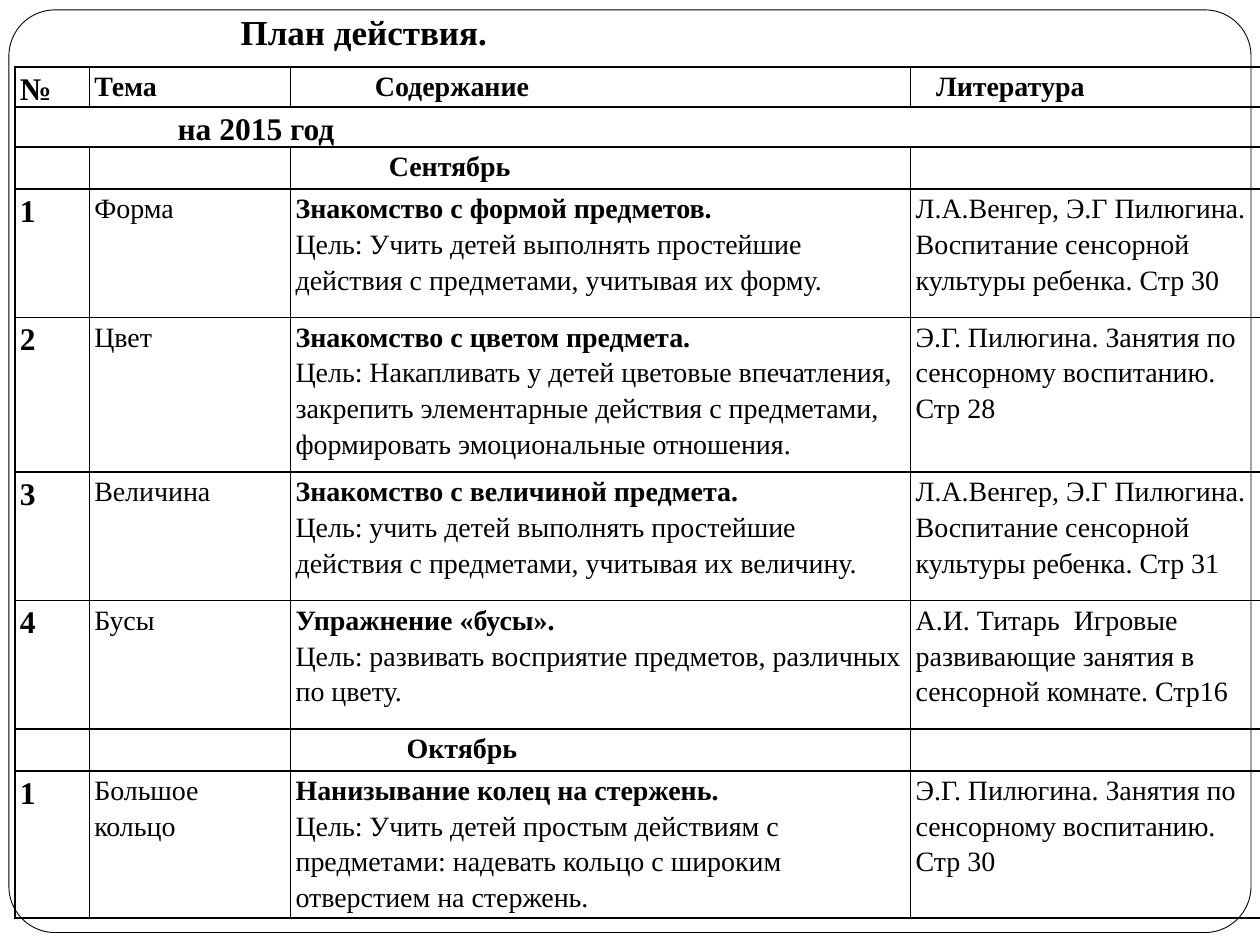
from lxml.etree import SubElement
from pptx import Presentation
from pptx.dml.color import RGBColor
from pptx.enum.shapes import MSO_SHAPE
from pptx.enum.text import MSO_ANCHOR
from pptx.oxml.ns import qn
from pptx.util import Cm, Pt

COLUMNS = [1.5, 4.06, 12.5, 7.06]
ROWS = [0.79, 0.79, 0.84, 2.59, 3.12, 2.59, 2.59, 0.84, 2.97]
VENGER = "Л.А.Венгер, Э.Г Пилюгина. Воспитание сенсорной культуры ребенка. Стр "
PILYUGINA = "Э.Г. Пилюгина. Занятия по сенсорному воспитанию. Стр "
HEADINGS = [("№", 18, 0), ("Тема", 16, 0), ("Содержание", 16, 1.6), ("Литература", 16, 0.41)]
MONTHS = {2: ("Сентябрь", 1.88), 7: ("Октябрь", 2.24)}
LESSONS = {
    3: ("1", "Форма", "Знакомство с формой предметов.",
        "Цель: Учить детей выполнять простейшие действия с предметами, учитывая их форму.",
        VENGER + "30"),
    4: ("2", "Цвет", "Знакомство с цветом предмета.",
        "Цель: Накапливать у детей цветовые впечатления, закрепить элементарные действия "
        "с предметами, формировать эмоциональные отношения.",
        PILYUGINA + "28"),
    5: ("3", "Величина", "Знакомство с величиной предмета.",
        "Цель: учить детей выполнять простейшие действия с предметами, учитывая их величину.",
        VENGER + "31"),
    6: ("4", "Бусы", "Упражнение «бусы».",
        "Цель: развивать восприятие предметов, различных по цвету.",
        "А.И. Титарь  Игровые развивающие занятия в сенсорной комнате. Стр16"),
    8: ("1", "Большое кольцо", "Нанизывание колец на стержень.",
        "Цель: Учить детей простым действиям с предметами: надевать кольцо с широким "
        "отверстием на стержень.",
        PILYUGINA + "30"),
}


def color(value):
    return RGBColor.from_string(value)


def write(frame, text, size=16, bold=False, indent=0, spacing=1.15):
    paragraph = frame.paragraphs[0]
    if paragraph.runs:
        paragraph = frame.add_paragraph()
    paragraph.line_spacing = spacing
    if indent:
        properties = paragraph._p.get_or_add_pPr()
        properties.set("marL", str(Cm(indent)))
        properties.set("indent", "0")
    run = paragraph.add_run()
    run.text = text
    run.font.name = SlideBuilder.font
    run.font.size = Pt(size)
    run.font.bold = bold
    run.font.color.rgb = color(SlideBuilder.ink)


class SlideBuilder:
    """Holds the style and the current slide, and adds its elements."""

    font = "Times New Roman"
    ink = "000000"
    paper = "FFFFFF"

    def __init__(self, slide):
        self.slide = slide

    def frame(self, left, top, width, height):
        border = self.slide.shapes.add_shape(
            MSO_SHAPE.ROUNDED_RECTANGLE, Cm(left), Cm(top), Cm(width), Cm(height))
        border.adjustments[0] = 0.05
        border.shadow.inherit = False
        border.fill.solid()
        border.fill.fore_color.rgb = color(self.paper)
        border.line.color.rgb = color(self.ink)
        border.line.width = Pt(0.5)

    def title(self, text, left, top, width, height, **style):
        heading = self.slide.shapes.add_textbox(
            Cm(left), Cm(top), Cm(width), Cm(height)).text_frame
        heading.word_wrap = True
        heading.vertical_anchor = MSO_ANCHOR.MIDDLE
        write(heading, text, **style)

    def table(self, left, top, columns, rows):
        plan = self.slide.shapes.add_table(
            len(rows), len(columns), Cm(left), Cm(top), Cm(sum(columns)), Cm(sum(rows))).table
        plan.first_row = plan.horz_banding = False
        for column, width in zip(plan.columns, columns):
            column.width = Cm(width)
        for row, height in zip(plan.rows, rows):
            row.height = Cm(height)
            for cell in row.cells:
                self.style_cell(cell)
        return plan

    def style_cell(self, cell):
        cell.margin_left = cell.margin_right = Cm(0.1)
        cell.margin_top = cell.margin_bottom = 0
        properties = cell._tc.get_or_add_tcPr()
        for side in ("a:lnL", "a:lnR", "a:lnT", "a:lnB"):
            line = SubElement(properties, qn(side), w=str(Pt(1)))
            fill = SubElement(line, qn("a:solidFill"))
            SubElement(fill, qn("a:srgbClr"), val=self.ink)
        cell.fill.background()


def main():
    presentation = Presentation()
    presentation.slide_width, presentation.slide_height = Cm(25.4), Cm(19.05)
    builder = SlideBuilder(presentation.slides.add_slide(presentation.slide_layouts[6]))
    builder.frame(0.18, 0.2, 25.04, 18.6)
    plan = builder.table(0.3, 1.35, COLUMNS, ROWS)

    for column, (heading, size, indent) in enumerate(HEADINGS):
        write(plan.cell(0, column).text_frame, heading, size=size, bold=True, indent=indent)
    year = plan.cell(1, 0)
    year.merge(plan.cell(1, len(COLUMNS) - 1))
    write(year.text_frame, "на 2015 год", size=18, bold=True, indent=3.18)
    for row, (month, indent) in MONTHS.items():
        write(plan.cell(row, 2).text_frame, month, bold=True, indent=indent)
    for row, (number, topic, activity, goal, source) in LESSONS.items():
        number_cell, topic_cell, content_cell, source_cell = (
            cell.text_frame for cell in plan.rows[row].cells)
        write(number_cell, number, size=18, bold=True)
        write(topic_cell, topic)
        write(content_cell, activity, bold=True)
        write(content_cell, goal)
        write(source_cell, source)

    builder.title("План действия.", 0, 0.08, 10.16, 1.12,
                  size=20, bold=True, indent=4.6, spacing=1.0)
    presentation.save("out.pptx")


if __name__ == "__main__":
    main()
